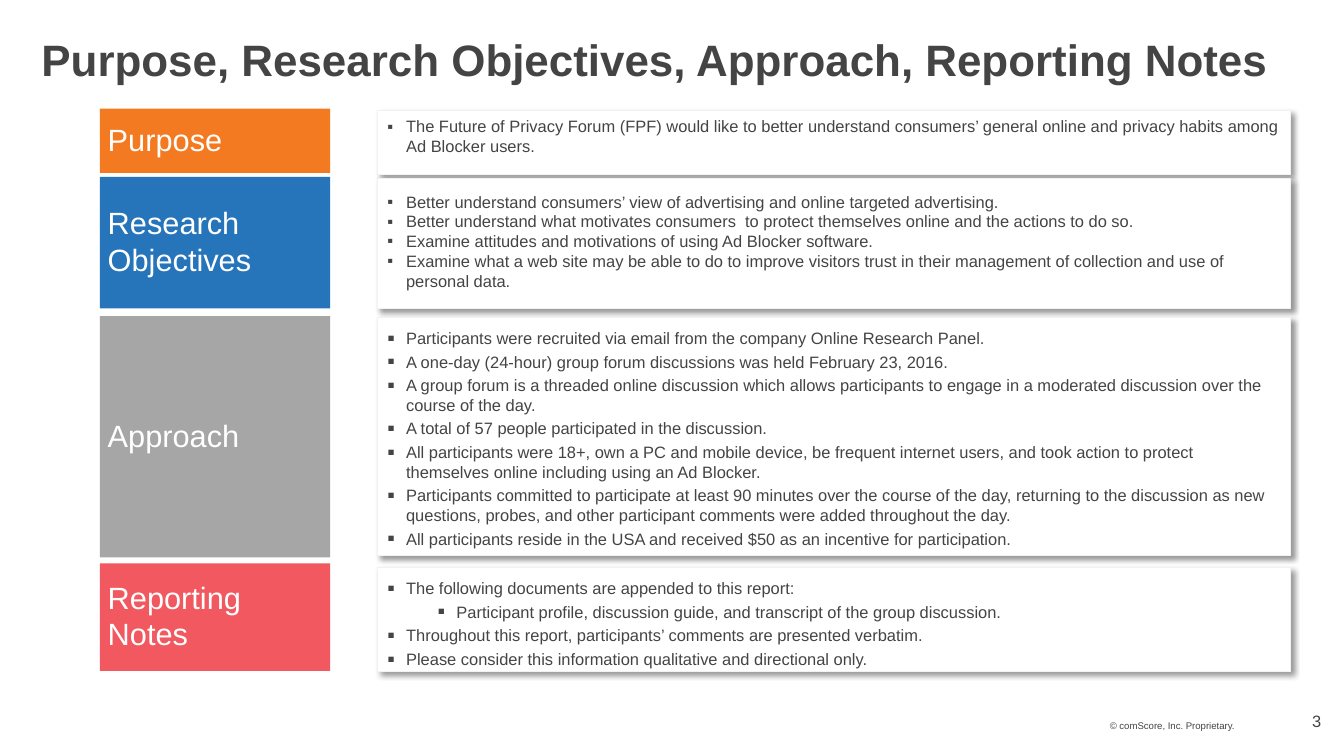
"""Build the slide on purpose, research objectives, approach and reporting notes."""
from lxml.etree import SubElement
from pptx import Presentation
from pptx.dml.color import RGBColor
from pptx.enum.shapes import MSO_SHAPE
from pptx.enum.text import MSO_ANCHOR, MSO_AUTO_SIZE, PP_ALIGN
from pptx.oxml import parse_xml
from pptx.oxml.ns import nsdecls, qn
from pptx.util import Pt

TEXT = RGBColor(0x44, 0x44, 0x44)
WHITE = RGBColor(0xFF, 0xFF, 0xFF)
EDGE = RGBColor(0xF2, 0xF2, 0xF2)
ORANGE = RGBColor(0xF3, 0x7A, 0x20)
BLUE = RGBColor(0x26, 0x74, 0xBA)
GRAY = RGBColor(0xA6, 0xA6, 0xA6)
RED = RGBColor(0xF1, 0x58, 0x60)

TITLE = "Purpose, Research Objectives, Approach, Reporting Notes"
COPYRIGHT = "© comScore, Inc. Proprietary."
PAGE_NUMBER = "3"

SECTIONS = [
    {
        "label": ["Purpose"], "color": ORANGE,
        "label_span": (79.2, 46.8), "panel_span": (80.6, 46.8),
        "inset": 4.3, "before": 0, "bullet": 100,
        "items": [
            (0, "The Future of Privacy Forum (FPF) would like to better understand consumers’ general "
                "online and privacy habits among Ad Blocker users."),
        ],
    },
    {
        "label": ["Research Objectives"], "color": BLUE,
        "label_span": (128.9, 95.8), "panel_span": (130.3, 94.3),
        "inset": 9.4, "before": 0, "bullet": 100,
        "items": [
            (0, "Better understand consumers’ view of advertising and online targeted advertising."),
            (0, "Better understand what motivates consumers  to protect themselves online and the "
                "actions to do so."),
            (0, "Examine attitudes and motivations of using Ad Blocker software."),
            (0, "Examine what a web site may be able to do to improve visitors trust in their "
                "management of collection and use of personal data."),
        ],
    },
    {
        "label": ["Approach"], "color": GRAY,
        "label_span": (230.4, 175.7), "panel_span": (231.1, 173.5),
        "inset": 7.9, "before": 2.75, "bullet": 130,
        "items": [
            (0, "Participants were recruited via email from the company Online Research Panel."),
            (0, "A one-day (24-hour) group forum discussions was held February 23, 2016."),
            (0, "A group forum is a threaded online discussion which allows participants to engage in a "
                "moderated discussion over the course of the day."),
            (0, "A total of 57 people participated in the discussion."),
            (0, "All participants were 18+, own a PC and mobile device, be frequent internet users, "
                "and took action to protect themselves online including using an Ad Blocker."),
            (0, "Participants committed to participate at least 90 minutes over the course of the day, "
                "returning to the discussion as new questions, probes, and other participant comments "
                "were added throughout the day."),
            (0, "All participants reside in the USA and received $50 as an incentive for participation."),
        ],
    },
    {
        "label": ["Reporting", "Notes"], "color": RED,
        "label_span": (410.4, 78.5), "panel_span": (413.3, 76.3),
        "inset": 7.9, "before": 2.75, "bullet": 130,
        "items": [
            (0, "The following documents are appended to this report:"),
            (1, "Participant profile, discussion guide, and transcript of the group discussion."),
            (0, "Throughout this report, participants’ comments are presented verbatim."),
            (0, "Please consider this information qualitative and directional only."),
        ],
    },
]

LABEL_LEFT, LABEL_WIDTH = 72.7, 167.8
PANEL_LEFT, PANEL_WIDTH = 275, 665.3
LIST_INDENTS = (13.7, 50.4)
HANGING = 13.7


def place(box, left, top, width, height):
    box.left, box.top, box.width, box.height = Pt(left), Pt(top), Pt(width), Pt(height)


def add_bullet(para, level, percent):
    properties = para._p.get_or_add_pPr()
    properties.set("marL", str(Pt(LIST_INDENTS[level])))
    properties.set("indent", str(-Pt(HANGING)))
    SubElement(properties, qn("a:buSzPct"), val=str(percent * 1000))
    SubElement(properties, qn("a:buFont"), typeface="Arial")
    SubElement(properties, qn("a:buChar"), char="▪")


def write_text(box, items, size, color=TEXT, bold=False, align=PP_ALIGN.LEFT,
               anchor=MSO_ANCHOR.MIDDLE, insets=(0, 0, 0, 0), before=0,
               line_spacing=1.0, bullet=None):
    frame = box.text_frame
    frame.word_wrap = True
    frame.auto_size = MSO_AUTO_SIZE.NONE
    frame.vertical_anchor = anchor
    (frame.margin_left, frame.margin_top,
     frame.margin_right, frame.margin_bottom) = map(Pt, insets)
    for index, (level, text) in enumerate(items):
        para = frame.add_paragraph() if index else frame.paragraphs[0]
        para.level = level
        para.alignment = align
        para.line_spacing = line_spacing
        para.space_before = Pt(before if index else 0)
        para.space_after = Pt(0)
        if bullet:
            add_bullet(para, level, bullet)
        span = para.add_run()
        span.text = text
        span.font.name = "Arial"
        span.font.size = Pt(size)
        span.font.bold = bold
        span.font.color.rgb = color


def style_panel(panel):
    panel.fill.solid()
    panel.fill.fore_color.rgb = WHITE
    panel.line.color.rgb = EDGE
    panel.line.width = Pt(0.75)
    panel._element.spPr.append(parse_xml(
        f'<a:effectLst {nsdecls("a")}><a:outerShdw blurRad="{Pt(4)}" dist="{Pt(3)}" '
        'dir="2700000" algn="tl" rotWithShape="0"><a:srgbClr val="000000">'
        '<a:alpha val="40000"/></a:srgbClr></a:outerShdw></a:effectLst>'))


def add_section(page, panel, section):
    place(panel, PANEL_LEFT, section["panel_span"][0], PANEL_WIDTH, section["panel_span"][1])
    style_panel(panel)
    write_text(panel, section["items"], 12, anchor=MSO_ANCHOR.TOP,
               insets=(7.2, section["inset"], 7.2, 0),
               before=section["before"], bullet=section["bullet"])
    top, height = section["label_span"]
    label = page.shapes.add_shape(MSO_SHAPE.RECTANGLE, Pt(LABEL_LEFT), Pt(top),
                                  Pt(LABEL_WIDTH), Pt(height))
    label.shadow.inherit = False
    label.fill.solid()
    label.fill.fore_color.rgb = section["color"]
    label.line.fill.background()
    write_text(label, [(0, line) for line in section["label"]], 22.4, color=WHITE,
               insets=(5.8, 2.9, 2.9, 5.8))


def main():
    deck = Presentation()
    deck.slide_width, deck.slide_height = Pt(979.2), Pt(550.8)
    page = deck.slides.add_slide(deck.slide_layouts.get_by_name("Comparison"))
    title, *panels = page.placeholders

    place(title, 21.6, 0, 936, 90)
    write_text(title, [(0, TITLE)], 32, bold=True, insets=(8.6, 0, 8.6, 4.3))
    for panel, section in zip(panels, SECTIONS):
        add_section(page, panel, section)

    notice = page.shapes.add_textbox(Pt(808.6), Pt(500.4), Pt(108), Pt(36.7))
    write_text(notice, [(0, COPYRIGHT)], 7, anchor=MSO_ANCHOR.BOTTOM,
               insets=(0, 4.3, 0, 4.3), line_spacing=Pt(7.9))
    number = page.shapes.add_textbox(Pt(901.4), Pt(508.3), Pt(78.5), Pt(28.8))
    write_text(number, [(0, PAGE_NUMBER)], 12, align=PP_ALIGN.RIGHT,
               anchor=MSO_ANCHOR.BOTTOM, insets=(17.3, 4.3, 17.3, 4.3))
    deck.save("out.pptx")


if __name__ == "__main__":
    main()
